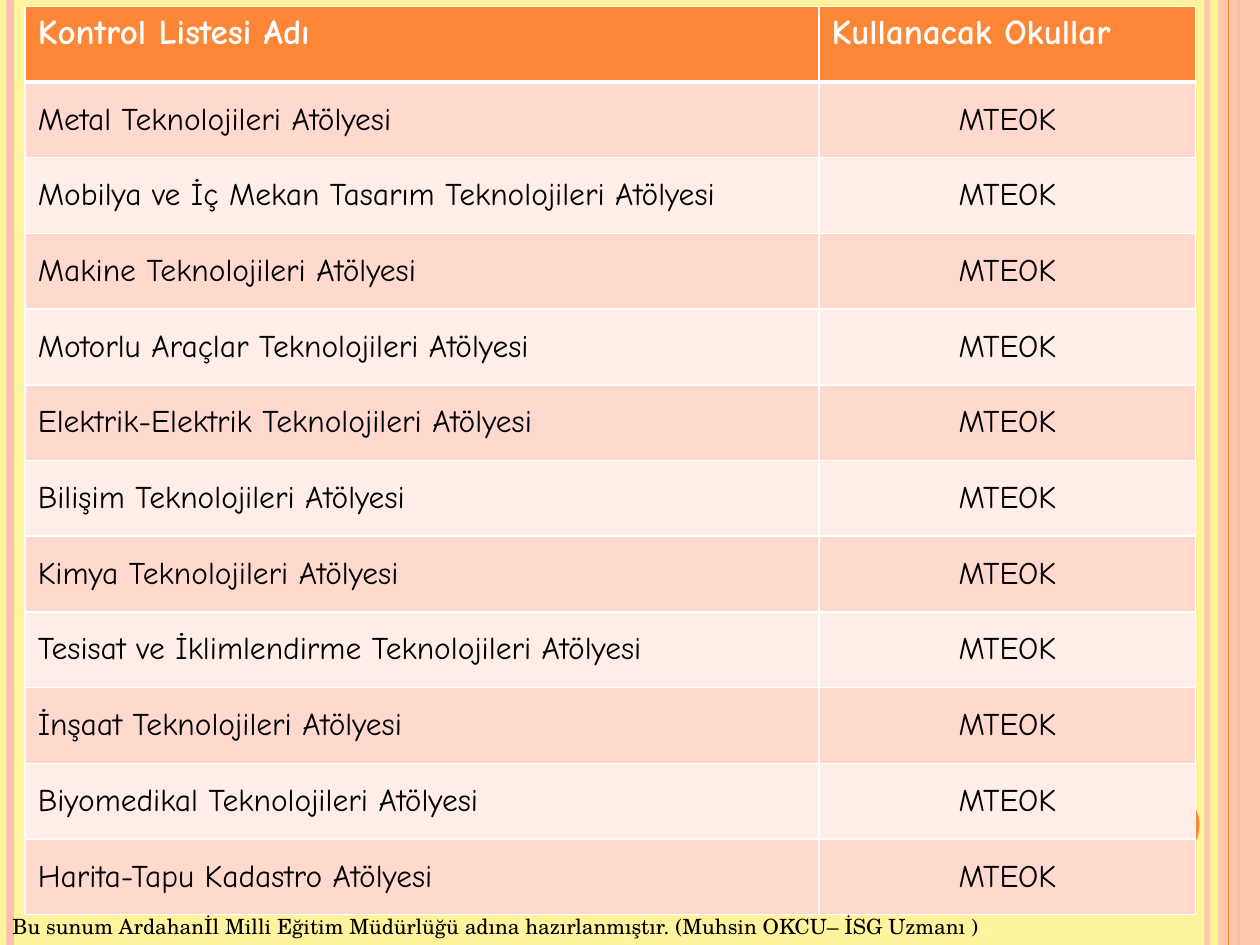
import pptx
import pptx.util
import pptx.dml.color
import pptx.enum.shapes
import pptx.enum.text
import pptx.oxml
import pptx.oxml.ns
import lxml.etree

COLORS = {"page": "FFF39D", "peach": "FEC3AE", "orange": "FE8637", "dark": "FFD9CE",
          "light": "FFEDE8", "white": "FFFFFF", "black": "000000"}
COLUMNS, ROWS = 100, 75
SCHOOL = "MTEOK"
HEADINGS = ["Kontrol Listesi Adı", "Kullanacak Okullar"]
WORKSHOPS = [
    "Metal Teknolojileri Atölyesi",
    "Mobilya ve İç Mekan Tasarım Teknolojileri Atölyesi",
    "Makine Teknolojileri Atölyesi",
    "Motorlu Araçlar Teknolojileri Atölyesi",
    "Elektrik-Elektrik Teknolojileri Atölyesi",
    "Bilişim Teknolojileri Atölyesi",
    "Kimya Teknolojileri Atölyesi",
    "Tesisat ve İklimlendirme Teknolojileri Atölyesi",
    "İnşaat Teknolojileri Atölyesi",
    "Biyomedikal Teknolojileri Atölyesi",
    "Harita-Tapu Kadastro Atölyesi",
]
FOOTER = "Bu sunum Ardahanİl Milli Eğitim Müdürlüğü adına hazırlanmıştır. (Muhsin OKCU– İSG Uzmanı )"


def rgb(name):
    return pptx.dml.color.RGBColor.from_string(COLORS[name])


def write(frame, text, font="Comic Neue", size=18, color="black", bold=False, align="LEFT"):
    para = frame.paragraphs[0]
    para.alignment = getattr(pptx.enum.text.PP_ALIGN, align)
    span = para.add_run()
    span.text = text
    span.font.name = font
    span.font.size = pptx.util.Pt(size)
    span.font.bold = bold
    span.font.color.rgb = rgb(color)


class SlideBuilder:
    """Draws styled elements on one slide, measured in grid columns and rows."""

    def __init__(self, deck):
        self.width, self.height = deck.slide_width, deck.slide_height
        self.page = deck.slides.add_slide(deck.slide_layouts[6])
        self.page.background.fill.solid()
        self.page.background.fill.fore_color.rgb = rgb("page")

    def across(self, columns):
        return round(self.width * columns / COLUMNS)

    def down(self, rows):
        return round(self.height * rows / ROWS)

    def area(self, left, top, width, height):
        return self.across(left), self.down(top), self.across(width), self.down(height)

    def set_opacity(self, element, percent):
        color = element.find(".//" + pptx.oxml.ns.qn("a:srgbClr"))
        alpha = lxml.etree.SubElement(color, pptx.oxml.ns.qn("a:alpha"))
        alpha.set("val", str(percent * 1000))

    def stripe(self, column, color, weight, opacity=100):
        x = self.across(column)
        line = self.page.shapes.add_connector(
            pptx.enum.shapes.MSO_CONNECTOR.STRAIGHT, x, 0, x, self.height)
        line.line.color.rgb = rgb(color)
        line.line.width = pptx.util.Pt(weight)
        properties = line._element.spPr
        if opacity < 100:
            self.set_opacity(properties, opacity)
        lxml.etree.SubElement(properties, pptx.oxml.ns.qn("a:effectLst"))

    def shape(self, kind, place, color, opacity=100):
        shape = self.page.shapes.add_shape(
            getattr(pptx.enum.shapes.MSO_SHAPE, kind), *self.area(*place))
        shape.shadow.inherit = False
        shape.fill.solid()
        shape.fill.fore_color.rgb = rgb(color)
        shape.line.fill.background()
        if opacity < 100:
            self.set_opacity(shape._element.spPr, opacity)

    def text(self, text, place, **style):
        box = self.page.shapes.add_textbox(*self.area(*place))
        box.text_frame.word_wrap = True
        box.text_frame.auto_size = pptx.enum.text.MSO_AUTO_SIZE.SHAPE_TO_FIT_TEXT
        write(box.text_frame, text, **style)

    def border(self, cell, **weights):
        properties = cell._tc.get_or_add_tcPr()
        for index, side in enumerate("LRTB"):
            width = pptx.util.Pt(weights.get(side, 1))
            properties.insert(index, pptx.oxml.parse_xml(
                f'<a:ln{side} {pptx.oxml.ns.nsdecls("a")} w="{width}"><a:solidFill>'
                f'<a:srgbClr val="{COLORS["white"]}"/></a:solidFill></a:ln{side}>'))

    def cell(self, cell, text, fill, anchor="MIDDLE", weights=None, **style):
        cell.fill.solid()
        cell.fill.fore_color.rgb = rgb(fill)
        cell.vertical_anchor = getattr(pptx.enum.text.MSO_ANCHOR, anchor)
        write(cell.text_frame, text, **style)
        self.border(cell, **(weights or {}))

    def table(self, place, widths, headings, names, value):
        table = self.page.shapes.add_table(
            len(names) + 1, len(widths), *self.area(*place)).table
        for column, width in zip(table.columns, widths):
            column.width = self.across(width)
        for row in table.rows:
            row.height = self.down(place[3] / len(table.rows))
        for column, heading in enumerate(headings):
            self.cell(table.cell(0, column), heading, "orange", anchor="TOP",
                      weights={"B": 3}, size=20, color="white", bold=True)
        for row, name in enumerate(names, 1):
            fill = "dark" if row % 2 else "light"
            weights = {"T": 3} if row == 1 else {}
            self.cell(table.cell(row, 0), name, fill, weights=weights)
            self.cell(table.cell(row, 1), value, fill, weights=weights, align="CENTER")


def main():
    deck = pptx.Presentation()
    deck.slide_width, deck.slide_height = pptx.util.Inches(10), pptx.util.Inches(7.5)
    slide = SlideBuilder(deck)
    slide.stripe(95.8, "peach", 3, opacity=93)
    slide.stripe(0.83, "peach", 4.5)
    slide.stripe(98.3, "orange", 1.5)
    slide.shape("RECTANGLE", (96.7, 0, 3.3, ROWS), "peach", opacity=87)
    slide.stripe(97.5, "orange", 0.75)
    slide.shape("OVAL", (89.2, 62.5, 6, 6), "orange")
    slide.table((2, 0.5, 92.9, 72.1), (63, 29.9), HEADINGS, WORKSHOPS, SCHOOL)
    slide.text(FOOTER, (0, 72, 79.5, 3), font="TeX Gyre Schola", size=12)
    deck.save("out.pptx")


if __name__ == "__main__":
    main()
